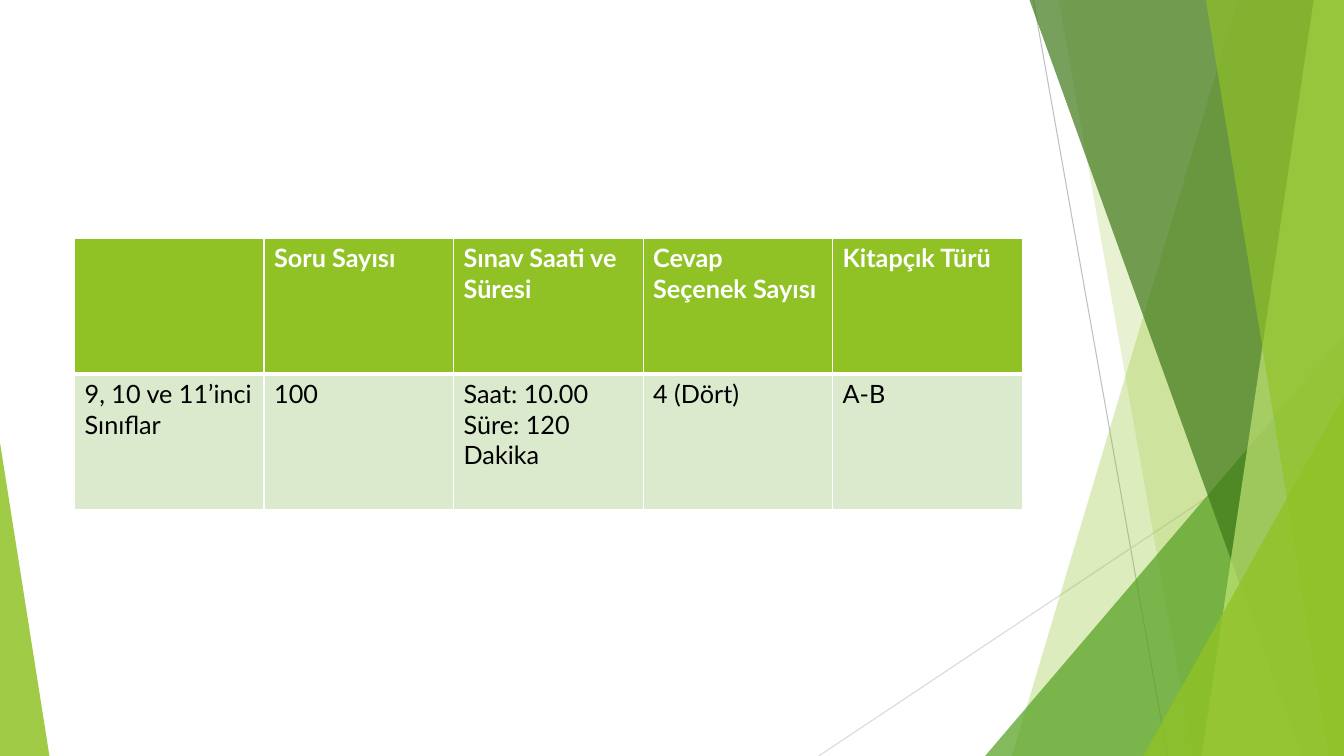
from lxml import etree
from pptx import Presentation
from pptx.dml.color import RGBColor
from pptx.enum.shapes import MSO_CONNECTOR, MSO_SHAPE
from pptx.oxml.ns import qn
from pptx.util import Inches, Pt

STRAIGHT = MSO_CONNECTOR.STRAIGHT
TRIANGLE = MSO_SHAPE.ISOSCELES_TRIANGLE

WHITE = RGBColor(0xFF, 0xFF, 0xFF)
BLACK = RGBColor(0x00, 0x00, 0x00)
LIME = RGBColor(0x90, 0xC2, 0x26)
PALE_LIME = RGBColor(0xC0, 0xE4, 0x74)
GREEN = RGBColor(0x54, 0xA0, 0x21)
DARK_GREEN = RGBColor(0x3F, 0x78, 0x19)
PALE_GREEN = RGBColor(0xDB, 0xE9, 0xCD)
GREY = RGBColor(0xBF, 0xBF, 0xBF)
LIGHT_GREY = RGBColor(0xD9, 0xD9, 0xD9)

prs = Presentation()
prs.slide_width, prs.slide_height = Inches(13.33), Inches(7.5)
slide = prs.slides.add_slide(prs.slide_layouts[6])


def at(x, y):
    return round(prs.slide_width * x / 100), round(prs.slide_height * y / 100)


def paint(facet, color, opacity):
    facet.shadow.inherit = False
    facet.line.fill.background()
    facet.fill.solid()
    facet.fill.fore_color.rgb = color
    tint = facet._element.spPr.find(qn("a:solidFill"))[0]
    etree.SubElement(tint, qn("a:alpha"), val=str(opacity * 1000))


rays = [
    ((76.89, 0), (86.87, 100), GREY),
    ((100, 53.73), (60.92, 100), LIGHT_GREY),
]
for start, end, color in rays:
    ray = slide.shapes.add_connector(STRAIGHT, *at(*start), *at(*end))
    ray.line.color.rgb = color
    ray.line.width = Pt(0.75)
    etree.SubElement(ray._element.spPr, qn("a:effectLst"))

facets = [
    ("band", 92.1, 75.3, LIME, 30),
    ("band", 78.77, 88.75, LIME, 20),
    ("corner", 73.3, 44.4, GREEN, 72),
    ("band", 76.6, 96.85, DARK_GREEN, 70),
    ("band", 97.75, 89.42, PALE_LIME, 70),
    ("band", 89.72, 98.87, LIME, 65),
    ("corner", 85.07, 52.4, LIME, 80),
]
for kind, first, second, color, opacity in facets:
    if kind == "band":
        outline = slide.shapes.build_freeform(*at(first, 0), scale=1)
        outline.add_line_segments([at(100, 0), at(100, 100), at(second, 100)])
        facet = outline.convert_to_shape()
    else:
        facet = slide.shapes.add_shape(
            TRIANGLE, *at(first, second), *at(100 - first, 100 - second))
        facet.adjustments[0] = 1
    paint(facet, color, opacity)

left_wedge = slide.shapes.add_shape(TRIANGLE, *at(0, 58.53), *at(3.68, 41.47))
left_wedge.adjustments[0] = 0
paint(left_wedge, LIME, 85)

exam_rows = [
    ["", "Soru Sayısı", "Sınav Saati ve Süresi", "Cevap Seçenek Sayısı", "Kitapçık Türü"],
    ["9, 10 ve 11’inci Sınıflar", "100", "Saat: 10.00 Süre: 120 Dakika", "4 (Dört)", "A-B"],
]
column_width, row_height = at(14.1, 18)
exam_table = slide.shapes.add_table(
    2, 5, *at(5.55, 31.47), 5 * column_width, 2 * row_height).table

row_styles = [
    (LIME, WHITE, True, {"L": 1, "R": 1, "T": 1, "B": 3}),
    (PALE_GREEN, BLACK, False, {"L": 1, "R": 1, "T": 3, "B": 1}),
]
for r, (texts, (fill, ink, bold, borders)) in enumerate(zip(exam_rows, row_styles)):
    for c, text in enumerate(texts):
        cell = exam_table.cell(r, c)
        properties = cell._tc.get_or_add_tcPr()
        for side, width in borders.items():
            edge = etree.SubElement(properties, qn(f"a:ln{side}"), w=str(Pt(width)))
            edge_fill = etree.SubElement(edge, qn("a:solidFill"))
            etree.SubElement(edge_fill, qn("a:srgbClr"), val=str(WHITE))
        cell.fill.solid()
        cell.fill.fore_color.rgb = fill
        if text:
            run = cell.text_frame.paragraphs[0].add_run()
            run.text = text
            run.font.name = "Lato"
            run.font.size = Pt(18)
            run.font.bold = bold
            run.font.color.rgb = ink

prs.save("out.pptx")
